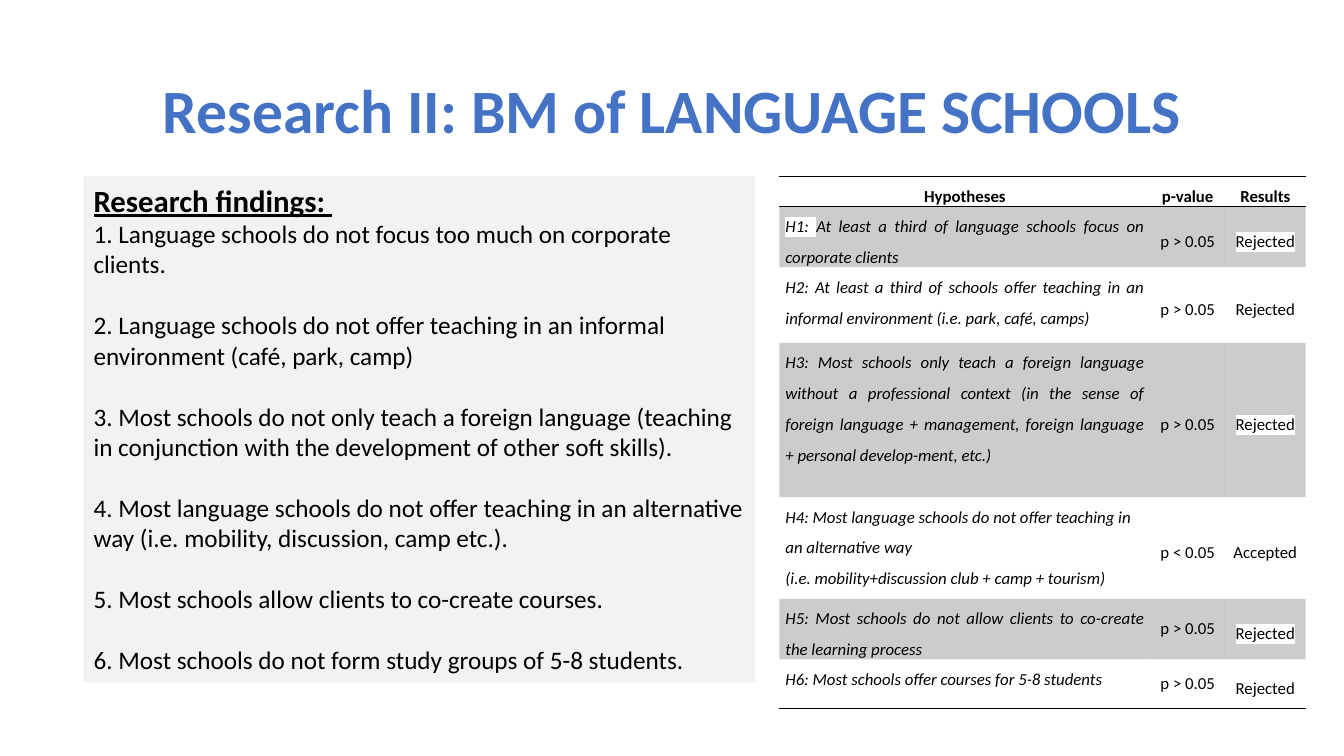
from lxml.etree import SubElement
from pptx import Presentation
from pptx.dml.color import RGBColor
from pptx.enum.shapes import MSO_SHAPE
from pptx.enum.text import MSO_ANCHOR, MSO_AUTO_SIZE, PP_ALIGN
from pptx.oxml import parse_xml
from pptx.oxml.ns import nsdecls, qn
from pptx.util import Inches, Pt

COLORS = {"title": "4472C4", "panel": "F2F2F2", "text": "000000",
          "band": "000000", "rule": "000000", "highlight": "FFFFFF"}
FONT = "Calibri"
NO_STYLE = "{2D5ABB26-0587-4C30-8999-92F81FD0307C}"

FINDINGS = [
    "1. Language schools do not focus too much on corporate clients.",
    "2. Language schools do not offer teaching in an informal environment (café, park, camp)",
    "3. Most schools do not only teach a foreign language (teaching in conjunction "
    "with the development of other soft skills).",
    "4. Most language schools do not offer teaching in an alternative way "
    "(i.e. mobility, discussion, camp etc.).",
    "5. Most schools allow clients to co-create courses.",
    "6. Most schools do not form study groups of 5-8 students.",
]
HEADERS = ["Hypotheses", "p-value", "Results"]
HYPOTHESES = [
    ("H1: At least a third of language schools focus on corporate clients",
     "p > 0.05", "Rejected"),
    ("H2: At least a third of schools offer teaching in an informal environment "
     "(i.e. park, café, camps)", "p > 0.05", "Rejected"),
    ("H3: Most schools only teach a foreign language without a professional context "
     "(in the sense of foreign language + management, foreign language "
     "+ personal develop-ment, etc.)", "p > 0.05", "Rejected"),
    ("H4: Most language schools do not offer teaching in an alternative way \n"
     "(i.e. mobility+discussion club + camp + tourism)", "p < 0.05", "Accepted"),
    ("H5: Most schools do not allow clients to co-create the learning process",
     "p > 0.05", "Rejected"),
    ("H6: Most schools offer courses for 5-8 students", "p > 0.05", "Rejected"),
]
COL_WIDTHS = [3.68, 0.74, 0.8]
ROW_HEIGHTS = [0.23, 0.49, 0.75, 1.53, 1.01, 0.49, 0.49]


def rgb(name):
    return RGBColor.from_string(COLORS[name])


def style(p, size, color="text", bold=False, italic=False, underline=False):
    f = p.font
    f.name, f.size, f.bold, f.italic = FONT, Pt(size), bold, italic
    f.underline = underline
    f.color.rgb = rgb(color)


def highlight(r):
    mark = SubElement(r._r.get_or_add_rPr(), qn("a:highlight"))
    SubElement(mark, qn("a:srgbClr"), val=COLORS["highlight"])


def add_title(s, text):
    tf = s.shapes.add_textbox(Inches(0.92), Inches(0.4), Inches(11.5), Inches(1.45)).text_frame
    tf.word_wrap = True
    tf.vertical_anchor = MSO_ANCHOR.MIDDLE
    p = tf.paragraphs[0]
    p.text = text
    p.alignment, p.line_spacing = PP_ALIGN.CENTER, 0.9
    style(p, 44, "title", bold=True)


def add_findings(s, heading, findings):
    sp = s.shapes.add_shape(MSO_SHAPE.RECTANGLE, Inches(0.83), Inches(1.75),
                            Inches(6.66), Inches(5.02))
    sp.shadow.inherit = False
    sp.fill.solid()
    sp.fill.fore_color.rgb = rgb("panel")
    sp.line.fill.background()
    tf = sp.text_frame
    tf.word_wrap = True
    tf.auto_size = MSO_AUTO_SIZE.SHAPE_TO_FIT_TEXT
    tf.vertical_anchor = MSO_ANCHOR.TOP
    p = tf.paragraphs[0]
    p.text, p.alignment = heading, PP_ALIGN.LEFT
    style(p, 22, bold=True, underline=True)
    for i, finding in enumerate(findings):
        p = tf.add_paragraph()
        p.text, p.alignment = finding, PP_ALIGN.LEFT
        p.space_before = Pt(22 if i else 0)  # one line between findings
        style(p, 18)


def shade(cell, banded):
    if not banded:
        cell.fill.background()
        return
    cell.fill.solid()
    cell.fill.fore_color.rgb = rgb("band")
    color = cell._tc.tcPr.find(".//" + qn("a:srgbClr"))
    SubElement(color, qn("a:alpha"), val="20000")


def add_rules(cell, sides):
    for i, side in enumerate(sides):
        cell._tc.tcPr.insert(i, parse_xml(
            f'<a:ln{side} {nsdecls("a")} w="12700"><a:solidFill>'
            f'<a:srgbClr val="{COLORS["rule"]}"/></a:solidFill></a:ln{side}>'))


def fill_cell(cell, text, row, col):
    cell.margin_left = cell.margin_right = Inches(0.06)
    cell.margin_top = cell.margin_bottom = 0
    header, statement = row == 0, row > 0 and col == 0
    cell.vertical_anchor = MSO_ANCHOR.TOP if header or statement else MSO_ANCHOR.MIDDLE
    p = cell.text_frame.paragraphs[0]
    if row == 1 and statement:
        # only the label of the first hypothesis is highlighted
        for part in (text[:4], text[4:]):
            p.add_run().text = part
        highlight(p.runs[0])
    else:
        p.text = text
        if header or col == 2:
            highlight(p.runs[0])
    p.alignment = PP_ALIGN.CENTER
    if statement:
        p.alignment = PP_ALIGN.LEFT if row == 4 else PP_ALIGN.JUSTIFY
    if not (col == 1 and row >= 5):
        p.line_spacing = 1.5
        p.space_after = Pt(12 if header else 6)
    if header:
        p.space_before = Pt(12)
    style(p, 12, bold=header, italic=statement)


def add_hypotheses(s, rows):
    frame = s.shapes.add_table(len(rows), len(COL_WIDTHS), Inches(7.73), Inches(1.75),
                               Inches(sum(COL_WIDTHS)), Inches(sum(ROW_HEIGHTS)))
    table = frame.table
    table.first_row = table.horz_banding = False
    table._tbl.tblPr.find(qn("a:tableStyleId")).text = NO_STYLE
    for column, width in zip(table.columns, COL_WIDTHS):
        column.width = Inches(width)
    for i, (values, height) in enumerate(zip(rows, ROW_HEIGHTS)):
        table.rows[i].height = Inches(height)
        for j, text in enumerate(values):
            cell = table.cell(i, j)
            fill_cell(cell, text, i, j)
            shade(cell, banded=i % 2 == 1)
            if i == 0:
                add_rules(cell, "TB")
            elif i == len(rows) - 1:
                add_rules(cell, "B")


def main():
    prs = Presentation()
    prs.slide_width, prs.slide_height = Inches(13.33), Inches(7.5)
    s = prs.slides.add_slide(prs.slide_layouts[6])
    add_title(s, "Research II: BM of LANGUAGE SCHOOLS")
    add_hypotheses(s, [HEADERS] + HYPOTHESES)
    add_findings(s, "Research findings: ", FINDINGS)
    prs.save("out.pptx")


if __name__ == "__main__":
    main()
